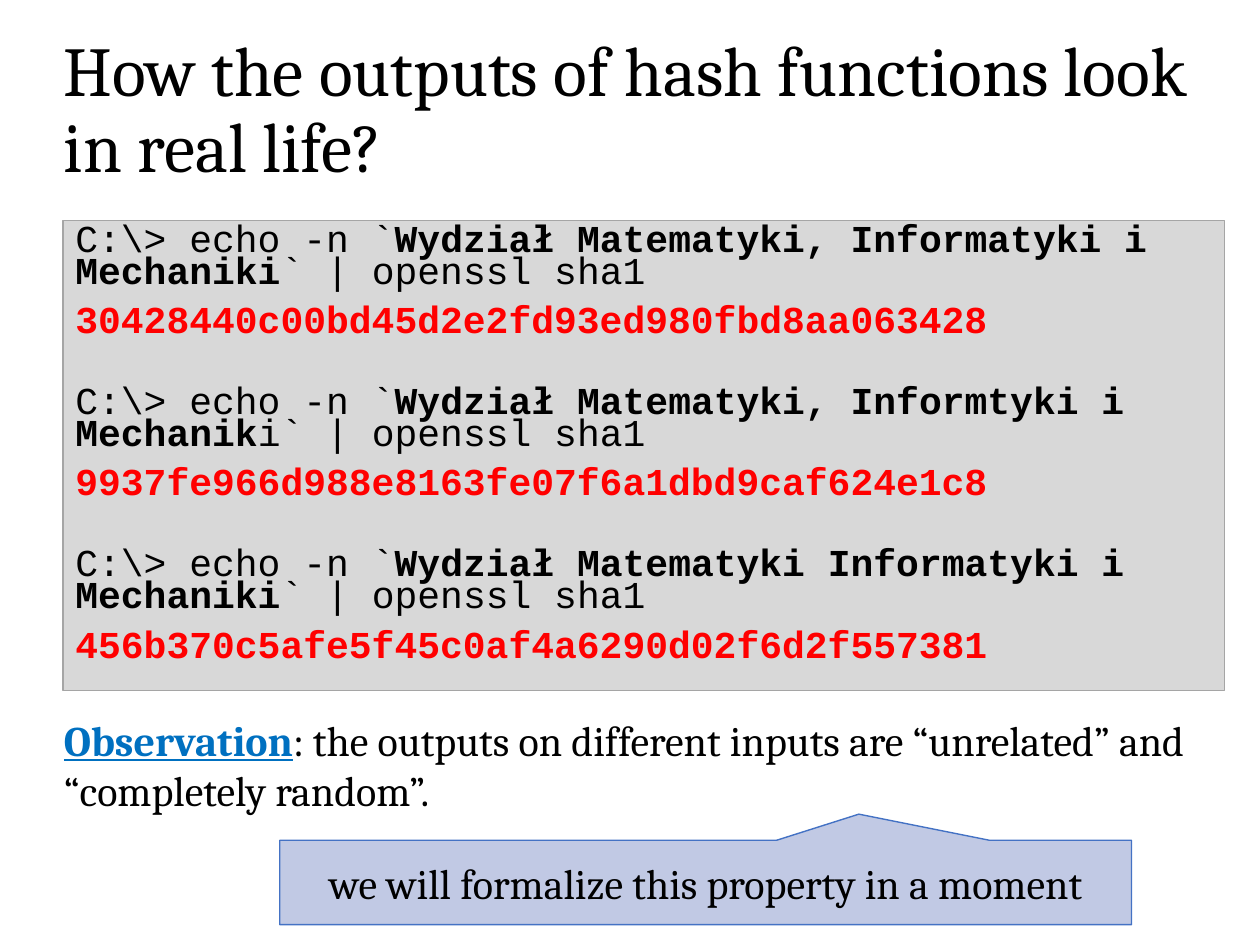
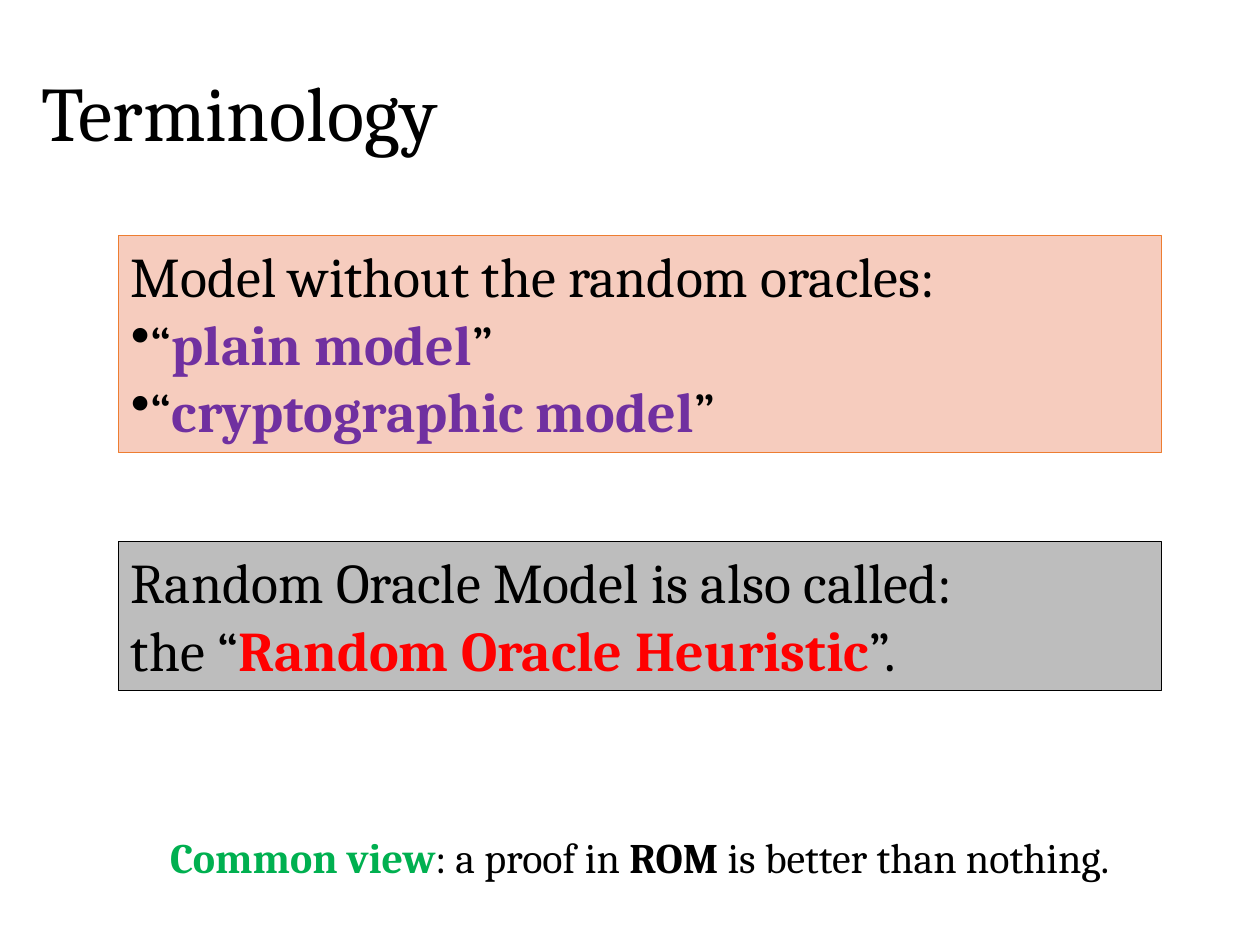
from lxml import etree
from pptx import Presentation
from pptx import util as u
from pptx.dml.color import RGBColor
from pptx.enum import shapes, text
from pptx.oxml.ns import qn

COLOURS = {
    "black": "000000", "red": "FF0000", "blue": "0070C0", "purple": "7030A0",
    "green": "00B050", "console": "D8D8D8", "console edge": "A5A5A5",
    "note": "C1C9E4", "note edge": "4472C4", "plain": "F6CCBE",
    "plain edge": "ED7D31", "oracle": "BDBDBD",
}
SERIF, MONO = "Cambria", "Courier New"

# A paragraph is a list of spans: (wording, colour, bold).
HASHES = [
    ("Wydział Matematyki, Informatyki i Mechaniki", "",
     "30428440c00bd45d2e2fd93ed980fbd8aa063428"),
    ("Wydział Matematyki, Informtyki i Mechanik", "i",
     "9937fe966d988e8163fe07f6a1dbd9caf624e1c8"),
    ("Wydział Matematyki Informatyki i Mechaniki", "",
     "456b370c5afe5f45c0af4a6290d02f6d2f557381"),
]
OBSERVATION = [("Observation", "blue", True),
               (": the outputs on different inputs are “unrelated” and "
                "“completely random”.", "black", False)]
FORMALIZE = [("we will formalize this property in a moment", "black", False)]
PLAIN_NAMES = ["plain model", "cryptographic model"]
MODELS = [
    ("plain", "plain edge", 4.75, 4.37,
     [[("Model without the random oracles:", "black", False)]]
     + [[("“", "black", False), (name, "purple", True), ("”", "black", False)]
        for name in PLAIN_NAMES]),
    ("oracle", "black", 10.92, 3.0,
     [[("Random Oracle Model is also called:", "black", False)],
      [("the “", "black", False), ("Random Oracle Heuristic", "red", True),
       ("”.", "black", False)]]),
]
COMMON_VIEW = [("Common view", "green", True), (": a proof in ", "black", False),
               ("ROM", "black", True), (" is better than nothing.", "black", False)]


def colour(name):
    return RGBColor.from_string(COLOURS[name])


def write(box, paragraphs, size, font=SERIF, anchor=text.MSO_ANCHOR.TOP,
          align=text.PP_ALIGN.LEFT, spacing=None):
    """Fill a box with paragraphs of spans and return the new paragraphs."""
    frame = box.text_frame
    frame.word_wrap = True
    frame.vertical_anchor = anchor
    for number, spans in enumerate(paragraphs):
        para = frame.add_paragraph() if number else frame.paragraphs[0]
        para.alignment = align
        if spacing:
            para.line_spacing = spacing
        for wording, tint, bold in spans:
            span = para.add_run()
            span.text = wording
            span.font.name, span.font.size = font, u.Pt(size)
            span.font.bold = bold
            span.font.color.rgb = colour(tint)
    return frame.paragraphs


def add_text(page, place, paragraphs, size, **style):
    box = page.shapes.add_textbox(*map(u.Cm, place))
    return write(box, paragraphs, size, **style)


def add_panel(page, place, fill, edge, kind=shapes.MSO_SHAPE.RECTANGLE):
    panel = page.shapes.add_shape(kind, *map(u.Cm, place))
    panel.shadow.inherit = False
    panel.fill.solid()
    panel.fill.fore_color.rgb = colour(fill)
    panel.line.color.rgb = colour(edge)
    panel.line.width = u.Pt(0.79)
    return panel


def add_title(page, place, wording, size):
    add_text(page, place, [[(wording, "black", False)]], size,
             anchor=text.MSO_ANCHOR.MIDDLE, spacing=0.9)


def add_bullet(para):
    bullet = etree.SubElement(para._p.get_or_add_pPr(), qn("a:buChar"))
    bullet.set("char", "•")


def build_hash_outputs(page):
    add_title(page, (1.04, 0.41, 23.24, 3.68),
              "How the outputs of hash functions look in real life?", 40)

    lines = []
    for phrase, tail, digest in HASHES:
        lines.append([("C:\\> echo -n `", "black", False), (phrase, "black", True),
                      (tail + "` | openssl sha1", "black", False)])
        lines.append([(digest, "red", True)])
    console = add_panel(page, (1.27, 4.45, 23.42, 9.47), "console", "console edge")
    paras = write(console, lines, 21.7, font=MONO, spacing=0.7)
    for number, para in enumerate(paras):
        starts_later_command = number and number % 2 == 0
        para.space_before = u.Pt(28 if starts_later_command else 10)

    observation = add_text(page, (1.04, 14.27, 23.67, 2.31), [OBSERVATION], 24)
    observation[0].runs[0].font.underline = True

    note = add_panel(page, (5.64, 16.94, 17.17, 1.7), "note", "note edge",
                     shapes.MSO_SHAPE.RECTANGULAR_CALLOUT)
    note.adjustments[0], note.adjustments[1] = 0.18, -0.81
    write(note, [FORMALIZE], 24, anchor=text.MSO_ANCHOR.MIDDLE,
          align=text.PP_ALIGN.CENTER)


def build_terminology(page):
    add_title(page, (0.58, 0.76, 24.23, 3.18), "Terminology", 44)
    for fill, edge, top, height, paragraphs in MODELS:
        panel = add_panel(page, (2.39, top, 21.03, height), fill, edge)
        for para in write(panel, paragraphs, 32):
            if para.text.startswith("“"):
                add_bullet(para)
    add_text(page, (3.18, 16.64, 21.64, 1.27), [COMMON_VIEW], 24)


def main():
    deck = Presentation()
    deck.slide_width, deck.slide_height = u.Cm(25.4), u.Cm(19.05)
    for build in (build_hash_outputs, build_terminology):
        build(deck.slides.add_slide(deck.slide_layouts[6]))
    deck.save("out.pptx")


if __name__ == "__main__":
    main()
